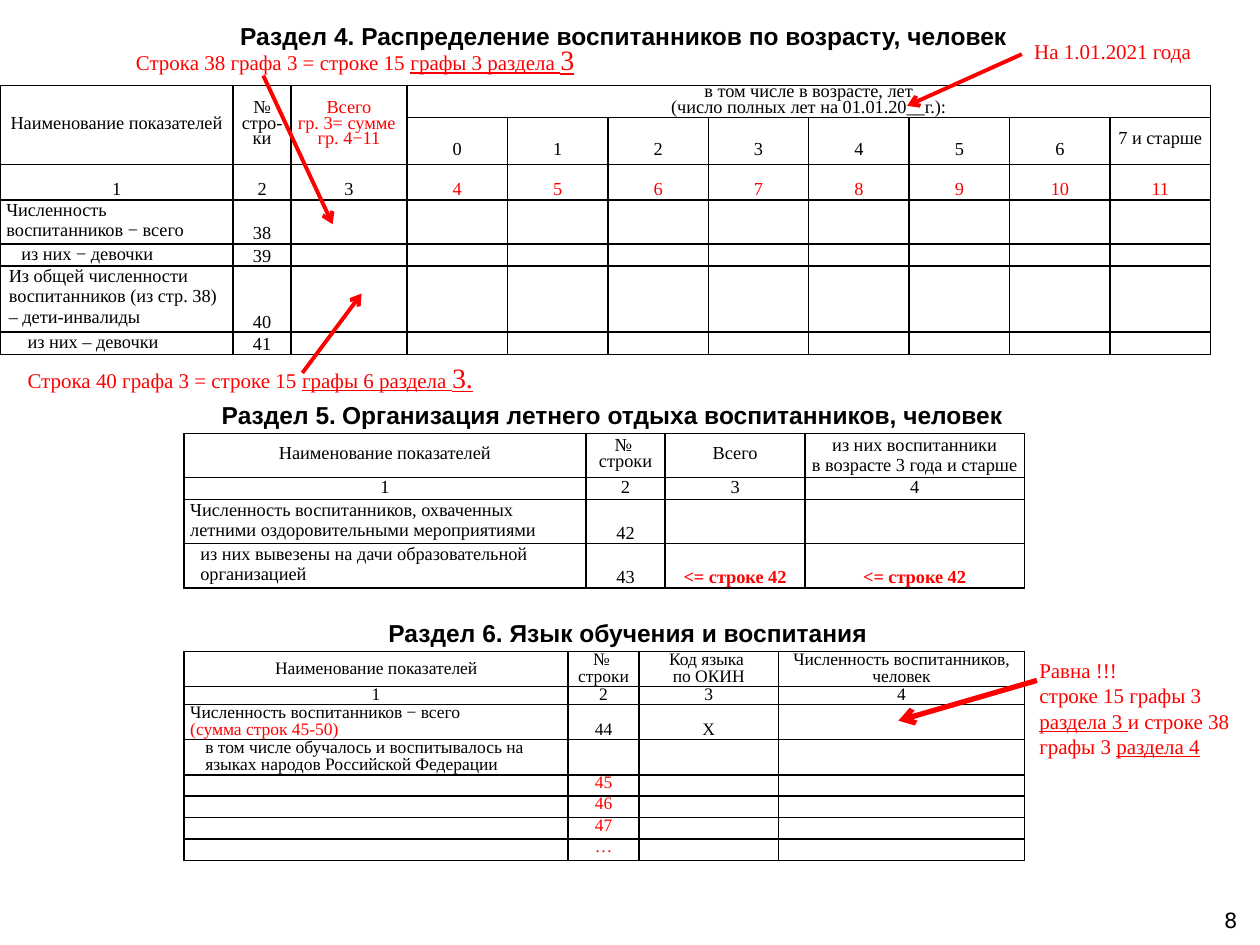
from lxml.etree import SubElement
from pptx import Presentation
from pptx.dml.color import RGBColor
from pptx.enum.shapes import MSO_CONNECTOR
from pptx.enum.text import MSO_ANCHOR as Anchor, MSO_AUTO_SIZE as AutoSize, PP_ALIGN as Align
from pptx.oxml.ns import qn
from pptx.util import Inches, Pt

BLACK = RGBColor(0, 0, 0)
RED = RGBColor(255, 0, 0)
SERIF = "Times New Roman"

HEAD = dict(align=Align.CENTER, anchor=Anchor.MIDDLE)
TOP = dict(align=Align.CENTER, anchor=Anchor.TOP)
LOW = dict(align=Align.CENTER, anchor=Anchor.BOTTOM)
LABEL = dict(align=Align.LEFT, anchor=Anchor.TOP)


def write(paragraph, text, size=12, font=SERIF, color=BLACK, bold=False,
          underline=False, align=Align.LEFT, spacing=None):
    """Write a string, or a list of (string, overrides) pieces, with line breaks."""
    paragraph.alignment = align
    if spacing:
        paragraph.line_spacing = Pt(spacing)
    if not text:
        SubElement(paragraph._p, qn("a:endParaRPr"), sz=str(int(size * 100)))
        return
    base = dict(size=size, font=font, color=color, bold=bold, underline=underline)
    for piece, overrides in [(text, {})] if isinstance(text, str) else text:
        look = base | overrides
        for index, line in enumerate(piece.split("\n")):
            if index:
                paragraph.add_line_break()
            if not line:
                continue
            run = paragraph.add_run()
            run.text = line
            run.font.size = Pt(look["size"])
            run.font.name = look["font"]
            run.font.color.rgb = look["color"]
            run.font.bold = look["bold"]
            run.font.underline = look["underline"]


def build_table(left, top, widths, heights, rows, size):
    """Each row is (style, cells); a cell is its text or (text, overrides)."""
    table = slide.shapes.add_table(
        len(heights), len(widths), Inches(left), Inches(top),
        Inches(sum(widths)), Inches(sum(heights))).table
    table.first_row = table.horz_banding = False
    for column, width in zip(table.columns, widths):
        column.width = Inches(width)
    for row, height in zip(table.rows, heights):
        row.height = Inches(height)
    for r, (row_style, contents) in enumerate(rows):
        for c, content in enumerate(contents):
            text, overrides = content if isinstance(content, tuple) else (content, {})
            style = row_style | overrides
            cell = table.cell(r, c)
            cell.vertical_anchor = style.pop("anchor")
            cell.margin_left = Inches(0.05 + style.pop("indent", 0))
            cell.margin_right = Inches(0.05)
            cell.margin_top = 0
            cell.margin_bottom = Inches(style.pop("bottom", 0))
            for side in ("a:lnL", "a:lnR", "a:lnT", "a:lnB"):
                border = SubElement(cell._tc.get_or_add_tcPr(), qn(side), w=str(Pt(1)))
                fill = SubElement(border, qn("a:solidFill"))
                SubElement(fill, qn("a:srgbClr"), val=str(BLACK))
            cell.fill.background()
            write(cell.text_frame.paragraphs[0], text, size=size, **style)
    return table


prs = Presentation()
prs.slide_width, prs.slide_height = Inches(10), Inches(7.5)
slide = prs.slides.add_slide(prs.slide_layouts[5])

# Section headings; the first one is the slide title
headings = [
    (1.79, 0.11, 6.32, "Раздел 4. Распределение воспитанников по возрасту, человек"),
    (1.64, 3.12, 6.44, [("Раздел 5.", {}), (" ", dict(size=12)),
                        ("Организация летнего отдыха воспитанников, человек", {})]),
    (2.97, 4.85, 4.08, "Раздел 6. Язык обучения и воспитания "),
]
for index, (left, top, width, text) in enumerate(headings):
    heading = slide.shapes.add_textbox(0, 0, 0, 0) if index else slide.shapes.title
    heading.left, heading.top = Inches(left), Inches(top)
    heading.width, heading.height = Inches(width), Inches(0.34)
    frame = heading.text_frame
    frame.word_wrap = False
    frame.auto_size = AutoSize.SHAPE_TO_FIT_TEXT
    frame.vertical_anchor = Anchor.MIDDLE
    write(frame.paragraphs[0], text, size=14, font="Arial", bold=True, align=Align.CENTER)

# Section 4: children by age
age_width = (9.61 - 1.85 - 0.46 - 0.92) / 8
tight = dict(spacing=9)
ages = [str(age) for age in range(7)]
age_table = build_table(
    0, 0.68, [1.85, 0.46, 0.92] + [age_width] * 8,
    [0.25, 0.37, 0.28, 0.33, 0.16, 0.48, 0.16],
    [
        (HEAD | tight, ["Наименование показателей", "№ стро-ки",
                        ("Всего\nгр. 3= сумме \nгр. 4−11", dict(color=RED)),
                        "в том числе в возрасте, лет\n(число полных лет на 01.01.20__г.):"]
         + [""] * 7),
        (LOW | tight | dict(bottom=0.04),
         [""] * 3 + ages + [("7 и старше", HEAD | dict(bottom=0))]),
        (LOW | dict(spacing=10),
         ["1", "2", "3"] + [(str(n), dict(color=RED)) for n in range(4, 12)]),
        (LOW, [("Численность воспитанников − всего", LABEL), "38"] + [""] * 9),
        (LOW, [("из них − девочки", LABEL | dict(indent=0.12)), "39"] + [""] * 9),
        (LOW, [("Из общей численности воспитанников (из стр. 38) – дети-инвалиды",
                LABEL | dict(indent=0.02)), "40"] + [""] * 9),
        (LOW, [("из них – девочки", LABEL | dict(indent=0.17)), "41"] + [""] * 9),
    ], size=10.5)
for column in range(3):
    age_table.cell(0, column).merge(age_table.cell(1, column))
age_table.cell(0, 3).merge(age_table.cell(0, 10))

# Section 5: summer holidays
limit = ("<= строке 42", dict(color=RED, bold=True))
build_table(
    1.46, 3.44, [3.19, 0.63, 1.11, 1.74], [0.35, 0.17, 0.35, 0.35],
    [
        (HEAD | tight, ["Наименование показателей", "№ \nстроки", "Всего",
                        ("из них воспитанники\nв возрасте 3 года и старше",
                         dict(spacing=None))]),
        (TOP, ["1", "2", "3", "4"]),
        (LOW, [("Численность воспитанников, охваченных летними оздоровительными "
                "мероприятиями", LABEL), "42", "", ""]),
        (LOW, [("из них вывезены на дачи образовательной организацией",
                LABEL | dict(indent=0.08)), "43", limit, limit]),
    ], size=10.5)

# Section 6: language of education
even = dict(spacing=10)
build_table(
    1.46, 5.17, [3.05, 0.56, 1.11, 1.95], [0.28, 0.14, 0.28, 0.28] + [0.17] * 4,
    [
        (HEAD | even, ["Наименование показателей", "№ \nстроки", "Код языка \nпо ОКИН",
                       "Численность воспитанников,\nчеловек"]),
        (TOP | even, ["1", "2", "3", "4"]),
        (LOW | even, [([("Численность воспитанников − всего \n", {}),
                        ("(сумма строк 45-50)", dict(color=RED))], LABEL), "44", "Х", ""]),
        (LOW | even, [("в том числе обучалось и воспитывалось на языках народов "
                       "Российской Федерации", LABEL | dict(indent=0.12)), "", "", ""]),
    ] + [(TOP | even | dict(color=RED), ["", line, "", ""])
         for line in ("45", "46", "47", "…")], size=10)

# Red check notes
lined = dict(underline=True)
large = dict(underline=True, size=16)
notes = [
    (0.98, 0.29, 4.25, 0.37, [[("Строка 38 графа 3 = строке 15 ", {}),
                               ("графы 3 раздела ", lined), ("3", large)]]),
    (0.12, 2.81, 4.25, 0.37, [[("Строка 40 графа 3 = строке 15 ", {}),
                               ("графы 6 раздела ", lined), ("3.", large)]]),
    (8.15, 5.17, 1.85, 0.91, ["Равна !!!",
                              [("строке 15 графы 3 ", {}), ("раздела 3 ", lined),
                               ("и строке 38 графы 3 ", {}), ("раздела 4", lined)]]),
    (8.11, 0.26, 1.5, 0.3, ["На 1.01.2021 года"]),
]
for left, top, width, height, lines in notes:
    frame = slide.shapes.add_textbox(
        Inches(left), Inches(top), Inches(width), Inches(height)).text_frame
    frame.word_wrap = True
    frame.auto_size = AutoSize.SHAPE_TO_FIT_TEXT
    for index, line in enumerate(lines):
        write(frame.add_paragraph() if index else frame.paragraphs[0], line, color=RED)

# Arrows from the notes to the cells they check
arrows = [
    (2.09, 0.6, 2.64, 1.78, 2.25),
    (2.4, 2.96, 2.87, 2.33, 2.25),
    (8.23, 5.4, 7.13, 5.72, 3),
    (8.11, 0.43, 7.2, 0.84, 2.25),
]
for x1, y1, x2, y2, weight in arrows:
    arrow = slide.shapes.add_connector(
        MSO_CONNECTOR.STRAIGHT, Inches(x1), Inches(y1), Inches(x2), Inches(y2))
    arrow.line.color.rgb = RED
    arrow.line.width = Pt(weight)
    SubElement(arrow.line._get_or_add_ln(), qn("a:tailEnd"), type="arrow")
    SubElement(arrow._element.spPr, qn("a:effectLst"))

page_frame = slide.shapes.add_textbox(
    Inches(7.59), Inches(7.1), Inches(2.33), Inches(0.4)).text_frame
page_frame.word_wrap = True
page_frame.vertical_anchor = Anchor.MIDDLE
write(page_frame.paragraphs[0], "8", font="DejaVu Sans", align=Align.RIGHT)

prs.save("out.pptx")
